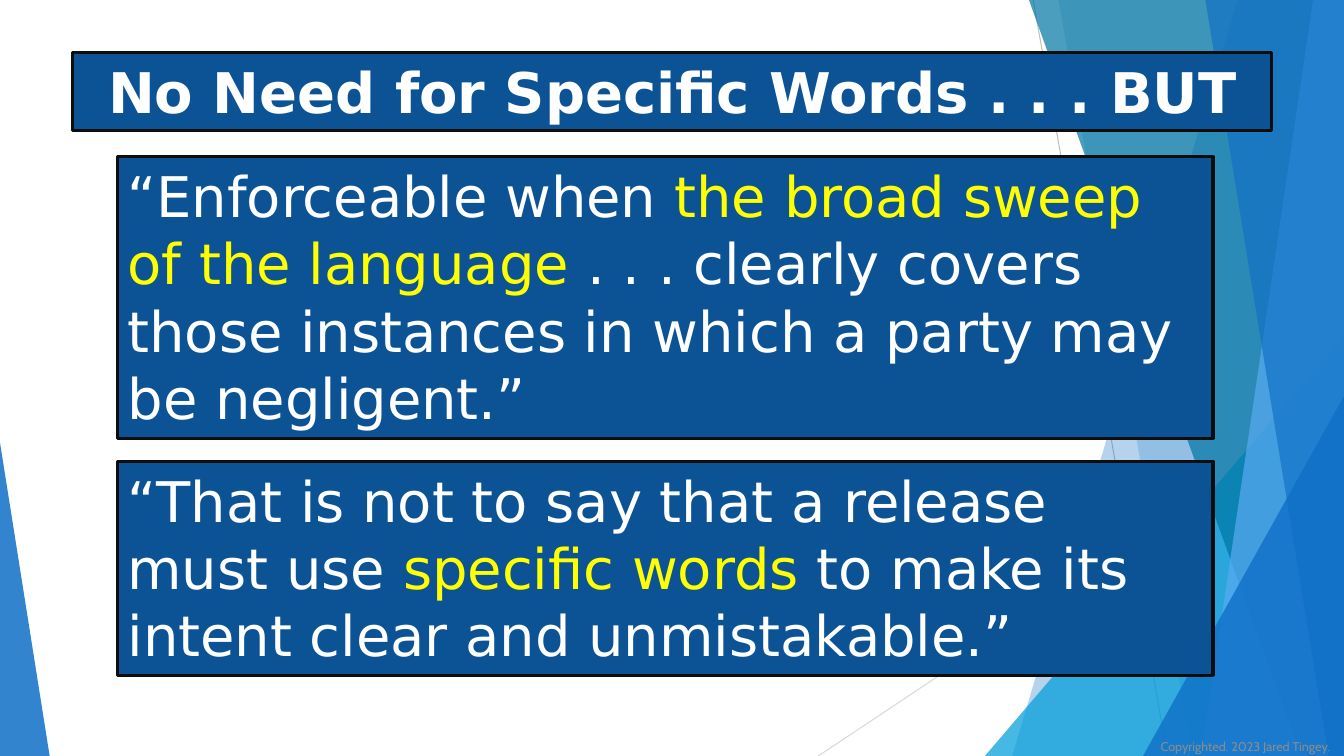
"""Builds a slide on release wording with two quotations over faceted blue panels."""
from lxml.etree import SubElement
from pptx import Presentation
from pptx.dml.color import RGBColor
from pptx.enum.shapes import MSO_CONNECTOR as Connector, MSO_SHAPE as Preset
from pptx.enum.text import MSO_ANCHOR as Anchor, PP_ALIGN as Align
from pptx.oxml.ns import qn
from pptx.util import Pt

WIDTH, HEIGHT = 960, 540
WHITE = RGBColor(0xFF, 0xFF, 0xFF)
YELLOW = RGBColor(0xFF, 0xFF, 0x00)
NAVY = RGBColor(0x0B, 0x53, 0x94)
INK = RGBColor(0x0D, 0x0D, 0x0D)
BLUE = RGBColor(0x0F, 0x6F, 0xC6)
CYAN = RGBColor(0x00, 0x9D, 0xD9)
TEAL = RGBColor(0x00, 0x76, 0xA3)
SKY = RGBColor(0x59, 0xAA, 0xF2)
SILVER = RGBColor(0xBF, 0xBF, 0xBF)
PALE = RGBColor(0xD9, 0xD9, 0xD9)
GREY = RGBColor(0x8C, 0x8C, 0x8C)


class SlideBuilder:
    """Holds the text style and the slide being drawn."""

    def __init__(self, slide, font, size):
        self.slide, self.font, self.size = slide, font, size

    def hairline(self, x1, y1, x2, y2, color):
        """Draws a thin straight line."""
        line = self.slide.shapes.add_connector(
            Connector.STRAIGHT, Pt(x1), Pt(y1), Pt(x2), Pt(y2))
        line.line.color.rgb = color
        line.line.width = Pt(0.75)
        SubElement(line.element.spPr, qn("a:effectLst"))

    def tint(self, facet, color, opacity):
        """Fills a facet with a translucent colour."""
        facet.shadow.inherit = False
        facet.line.fill.background()
        facet.fill.solid()
        facet.fill.fore_color.rgb = color
        rgb = facet.element.spPr.find(qn("a:solidFill")).find(qn("a:srgbClr"))
        SubElement(rgb, qn("a:alpha"), val=str(opacity * 1000))

    def panel(self, top_x, bottom_x, color, opacity):
        """Draws a full-height panel from a slanted edge to the right side."""
        outline = self.slide.shapes.build_freeform(Pt(top_x), 0)
        outline.add_line_segments(
            [(Pt(WIDTH), 0), (Pt(WIDTH), Pt(HEIGHT)), (Pt(bottom_x), Pt(HEIGHT))])
        self.tint(outline.convert_to_shape(), color, opacity)

    def corner(self, left, top, width, apex, color, opacity):
        """Draws a right triangle standing on the bottom edge."""
        facet = self.slide.shapes.add_shape(
            Preset.ISOSCELES_TRIANGLE, Pt(left), Pt(top), Pt(width), Pt(HEIGHT - top))
        facet.adjustments[0] = apex
        self.tint(facet, color, opacity)

    def banner(self, left, top, width, height, phrases, align=Align.LEFT, bold=False):
        """Draws an outlined navy box holding coloured phrases."""
        box = self.slide.shapes.add_shape(
            Preset.RECTANGLE, Pt(left), Pt(top), Pt(width), Pt(height))
        box.shadow.inherit = False
        box.fill.solid()
        box.fill.fore_color.rgb = NAVY
        box.line.color.rgb = INK
        box.line.width = Pt(2.25)
        frame = box.text_frame
        frame.word_wrap = True
        frame.vertical_anchor = Anchor.TOP
        paragraph = frame.paragraphs[0]
        paragraph.alignment = align
        for words, color in phrases:
            run = paragraph.add_run()
            run.text = words
            run.font.name, run.font.size = self.font, Pt(self.size)
            run.font.bold = bold
            run.font.color.rgb = color

    def footnote(self, left, top, width, height, words):
        """Writes a small grey line of text."""
        note = self.slide.shapes.add_textbox(Pt(left), Pt(top), Pt(width), Pt(height))
        frame = note.text_frame
        frame.word_wrap = True
        frame.margin_right = 0
        frame.vertical_anchor = Anchor.MIDDLE
        frame.text = words
        font = frame.paragraphs[0].runs[0].font
        font.name, font.size = "Cabin", Pt(9)
        font.color.rgb = GREY


def main():
    """Draws the backdrop, the heading and both quotations."""
    deck = Presentation()
    deck.slide_width, deck.slide_height = Pt(WIDTH), Pt(HEIGHT)
    page = SlideBuilder(deck.slides.add_slide(deck.slide_layouts[6]), "DejaVu Sans", 40)

    page.hairline(738, 0, 834, HEIGHT, SILVER)
    page.hairline(WIDTH, 290, 584.5, HEIGHT, PALE)
    page.panel(884, 723, BLUE, 30)
    page.panel(756, 852, BLUE, 20)
    page.corner(703.5, 240, 256.5, 1, CYAN, 72)
    page.panel(735, 929.5, TEAL, 70)
    page.panel(938, 858, SKY, 70)
    page.panel(861, 949, BLUE, 65)
    page.corner(816.5, 283, 143.5, 1, BLUE, 80)
    page.corner(0, 316, 35.5, 0, BLUE, 85)

    page.footnote(822, 518.5, 138, 29, "Copyrighted. 2023 Jared Tingey.")
    page.banner(52, 37.5, 856.5, 55.5, [("No Need for Specific Words . . . BUT", WHITE)],
                Align.CENTER, bold=True)
    page.banner(84, 329.5, 782.5, 153, [
        ("“That is not to say that a release must use ", WHITE),
        ("specific words", YELLOW),
        (" to make its intent clear and unmistakable.”", WHITE)])
    page.banner(84, 112, 782.5, 201, [
        ("“Enforceable when ", WHITE),
        ("the broad sweep of the language", YELLOW),
        (" . . . clearly covers those instances in which a party may be negligent.”", WHITE)])
    deck.save("out.pptx")


if __name__ == "__main__":
    main()
